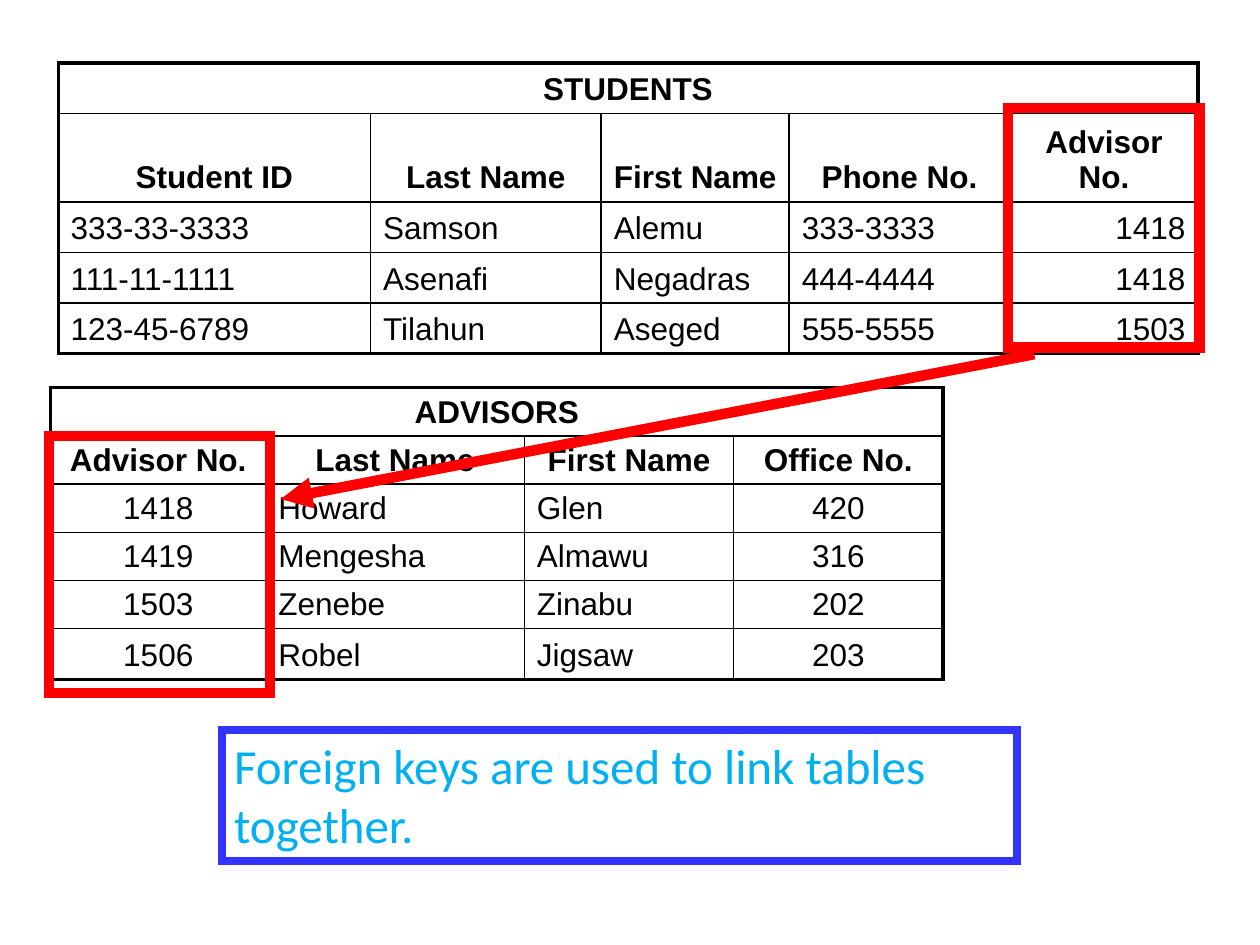
"""Build a slide that shows how a foreign key links the STUDENTS and ADVISORS tables."""
from dataclasses import dataclass

from lxml import etree
from pptx import Presentation
from pptx import util as u
from pptx.dml.color import RGBColor
from pptx.enum import shapes, text
from pptx.oxml import ns


@dataclass(frozen=True)
class Theme:
    ink: str = "000000"
    paper: str = "FFFFFF"
    key: str = "FF0000"
    note: str = "00B0F0"
    note_edge: str = "3333FF"
    table_font: str = "Arial"
    note_font: str = "Calibri"
    table_size: int = 18
    note_size: int = 28
    inner_rule: int = 1
    outer_rule: int = 2
    key_rule: float = 6
    note_rule: float = 4.5


theme = Theme()
LEFT, CENTER, RIGHT = text.PP_ALIGN.LEFT, text.PP_ALIGN.CENTER, text.PP_ALIGN.RIGHT


def format_run(run, color, **values):
    for name, value in values.items():
        setattr(run.font, name, value)
    run.font.color.rgb = RGBColor.from_string(color)


def outline(part, color, width):
    part.line.color.rgb = RGBColor.from_string(color)
    part.line.width = u.Pt(width)
    line = part.line._get_or_add_ln()
    etree.SubElement(line, ns.qn("a:miter"), lim="800000")
    return line


deck = Presentation()
deck.slide_width, deck.slide_height = u.Cm(25.4), u.Cm(19.05)
slide = deck.slides.add_slide(deck.slide_layouts[6])

advisors = {
    "at": (1.02, 7.82),
    "widths": [4.34, 5.21, 4.22, 4.22],
    "heights": [0.97] * 5 + [1.02],
    "aligns": [CENTER, LEFT, LEFT, CENTER],
    "rows": [
        ["ADVISORS", "", "", ""],
        ["Advisor No.", "Last Name", "First Name", "Office No."],
        ["1418", "Howard", "Glen", "420"],
        ["1419", "Mengesha", "Almawu", "316"],
        ["1503", "Zenebe", "Zinabu", "202"],
        ["1506", "Robel", "Jigsaw", "203"],
    ],
}
students = {
    "at": (1.17, 1.27),
    "widths": [6.3, 4.65, 3.79, 4.45, 3.79],
    "heights": [1.02, 1.78] + [1.02] * 3,
    "aligns": [LEFT] * 4 + [RIGHT],
    "rows": [
        ["STUDENTS", "", "", "", ""],
        ["Student ID", "Last Name", "First Name", "Phone No.", "Advisor No."],
        ["333-33-3333", "Samson", "Alemu", "333-3333", "1418"],
        ["111-11-1111", "Asenafi", "Negadras", "444-4444", "1418"],
        ["123-45-6789", "Tilahun", "Aseged", "555-5555", "1503"],
    ],
}

for relation in (advisors, students):
    widths, heights = relation["widths"], relation["heights"]
    last_row, last_column = len(heights) - 1, len(widths) - 1
    box = [u.Cm(n) for n in (*relation["at"], sum(widths), sum(heights))]
    grid = slide.shapes.add_table(len(heights), len(widths), *box).table
    grid.first_row = grid.horz_banding = False
    for column, width in zip(grid.columns, widths):
        column.width = u.Cm(width)
    for row, height in zip(grid.rows, heights):
        row.height = u.Cm(height)
    grid.cell(0, 0).merge(grid.cell(0, last_column))

    for r, entries in enumerate(relation["rows"]):
        for c, entry in enumerate(entries):
            cell = grid.cell(r, c)
            cell.fill.background()
            cell.vertical_anchor = text.MSO_ANCHOR.BOTTOM
            if entry:
                paragraph = cell.text_frame.paragraphs[0]
                paragraph.alignment = CENTER if r < 2 else relation["aligns"][c]
                run = paragraph.add_run()
                run.text = entry
                format_run(run, theme.ink, name=theme.table_font,
                           size=u.Pt(theme.table_size), bold=r < 2)
            on_edge = {
                "a:lnL": c == 0,
                "a:lnR": c == last_column or r == 0,
                "a:lnT": r == 0,
                "a:lnB": r == last_row,
            }
            properties = cell._tc.get_or_add_tcPr()
            for position, (side, outer) in enumerate(on_edge.items()):
                rule = theme.outer_rule if outer else theme.inner_rule
                border = etree.Element(ns.qn(side), w=str(u.Pt(rule)))
                fill = etree.SubElement(border, ns.qn("a:solidFill"))
                etree.SubElement(fill, ns.qn("a:srgbClr"), val=theme.ink)
                properties.insert(position, border)

    if relation is advisors:
        note = slide.shapes.add_shape(shapes.MSO_SHAPE.RECTANGLE, u.Cm(4.47), u.Cm(14.71),
                                      u.Cm(16.03), u.Cm(2.64))
        note.shadow.inherit = False
        note.fill.solid()
        note.fill.fore_color.rgb = RGBColor.from_string(theme.paper)
        outline(note, theme.note_edge, theme.note_rule)
        frame_format = {"word_wrap": True, "vertical_anchor": text.MSO_ANCHOR.TOP}
        for name, value in frame_format.items():
            setattr(note.text_frame, name, value)
        message = note.text_frame.paragraphs[0]
        message.alignment = LEFT
        run = message.add_run()
        run.text = "Foreign keys are used to link tables together."
        format_run(run, theme.note, name=theme.note_font, size=u.Pt(theme.note_size))

for key_box in ((20.32, 2.18, 3.86, 4.83), (0.99, 8.79, 4.45, 5.18)):
    key_frame = slide.shapes.add_shape(shapes.MSO_SHAPE.RECTANGLE, *map(u.Cm, key_box))
    key_frame.shadow.inherit = False
    key_frame.fill.background()
    outline(key_frame, theme.key, theme.key_rule)

link = slide.shapes.add_connector(shapes.MSO_CONNECTOR.STRAIGHT, u.Cm(20.85), u.Cm(7.14),
                                  u.Cm(5.66), u.Cm(10.06))
link_line = outline(link, theme.key, theme.key_rule)
etree.SubElement(link_line, ns.qn("a:tailEnd"), type="triangle")
etree.SubElement(link._element.spPr, ns.qn("a:effectLst"))

deck.save("out.pptx")
